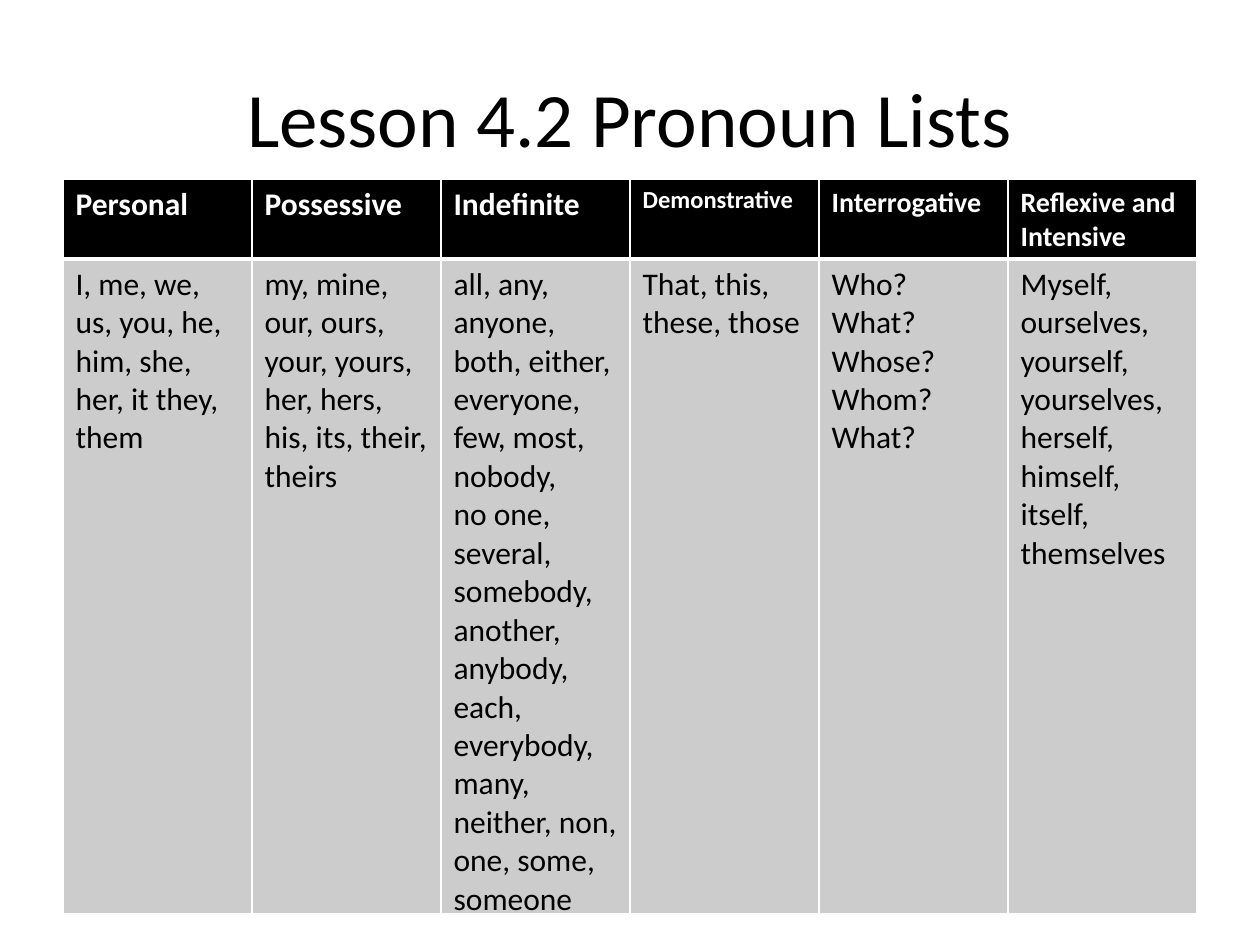
from lxml.etree import SubElement
from pptx import Presentation
from pptx.dml.color import RGBColor
from pptx.enum.text import MSO_ANCHOR as Anchor, PP_ALIGN as Align
from pptx.oxml.ns import qn
from pptx.util import Cm, Pt

BLACK, WHITE, GREY = "000000", "FFFFFF", "CCCCCC"

# Heading, heading size, paragraphs
PRONOUNS = [
    ("Personal", 18, ["I, me, we, us, you, he, him, she, her, it they, them"]),
    ("Possessive", 18, ["my, mine, our, ours, your, yours, her, hers, his, its, their, theirs"]),
    ("Indefinite", 18, [
        "all, any, anyone, both, either, everyone, few, most, nobody,",
        "no one, several, somebody, another, anybody, each, everybody, many, "
        "neither, non, one, some, someone",
    ]),
    ("Demonstrative", 14, ["That, this, these, those"]),
    ("Interrogative", 16, ["Who? What? Whose? Whom? What?"]),
    ("Reflexive and Intensive", 16, [
        "Myself, ourselves, yourself, yourselves, herself, himself, itself, themselves",
    ]),
]


def color(value):
    return RGBColor.from_string(value)


def write(frame, lines, ink, align=Align.LEFT, **font_format):
    """Fill a text frame with one paragraph per line."""
    for index, line in enumerate(lines):
        para = frame.add_paragraph() if index else frame.paragraphs[0]
        para.alignment = align
        span = para.add_run()
        span.text = line
        span.font.color.rgb = color(ink)
        for name, value in {"name": "Calibri", **font_format}.items():
            setattr(span.font, name, value)


def add_title(page, text):
    box = page.shapes.add_textbox(Cm(1.27), Cm(0.76), Cm(22.86), Cm(3.18))
    box.text_frame.word_wrap = True
    box.text_frame.vertical_anchor = Anchor.MIDDLE
    write(box.text_frame, [text], BLACK, Align.CENTER, size=Pt(44))


def set_borders(cell, **widths):
    """Draw white borders; the keys are the sides L, R, T and B."""
    props = cell._tc.get_or_add_tcPr()
    for index, (side, width) in enumerate(widths.items()):
        line = SubElement(props, qn(f"a:ln{side}"), w=str(Pt(width)))
        fill = SubElement(line, qn("a:solidFill"))
        SubElement(fill, qn("a:srgbClr"), val=WHITE)
        props.insert(index, line)


def fill_cell(cell, lines, fill, ink, top, bottom, **font_format):
    cell.fill.solid()
    cell.fill.fore_color.rgb = color(fill)
    set_borders(cell, L=1, R=1, T=top, B=bottom)
    write(cell.text_frame, lines, ink, **font_format)


def add_pronoun_table(page):
    row_height = Cm(1.03)
    table = page.shapes.add_table(
        2, len(PRONOUNS), Cm(1.27), Cm(3.61), Cm(22.86), 2 * row_height
    ).table
    for column, (heading, size, lines) in enumerate(PRONOUNS):
        fill_cell(table.cell(0, column), [heading], BLACK, WHITE, 1, 3,
                  size=Pt(size), bold=True)
        fill_cell(table.cell(1, column), lines, GREY, BLACK, 3, 1,
                  size=Pt(18), bold=False)


def main():
    deck = Presentation()
    deck.slide_width, deck.slide_height = Cm(25.4), Cm(19.05)
    page = deck.slides.add_slide(deck.slide_layouts[6])
    add_title(page, "Lesson 4.2 Pronoun Lists")
    add_pronoun_table(page)
    deck.save("out.pptx")


if __name__ == "__main__":
    main()
